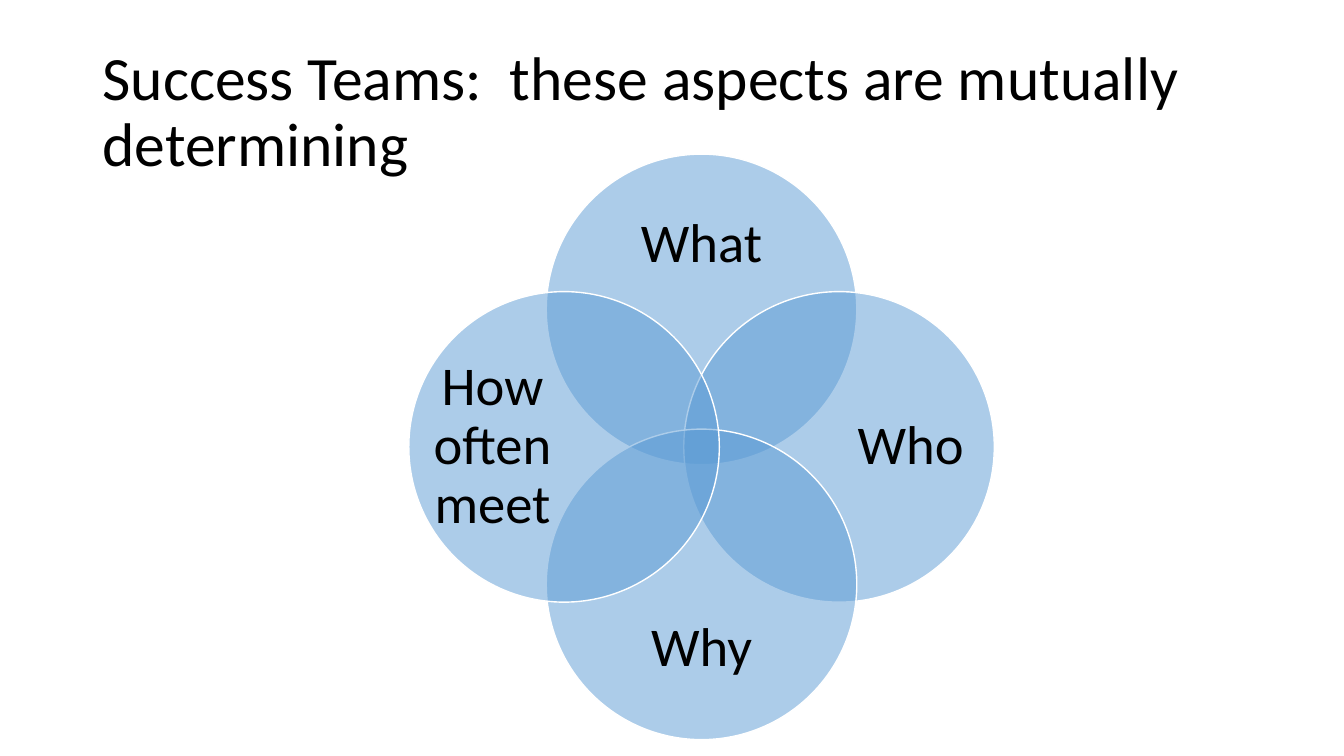
from lxml import etree
from pptx import Presentation
from pptx.dml.color import RGBColor
from pptx.enum import shapes, text
from pptx.oxml.ns import qn
from pptx.util import Pt

TITLE = "Success Teams:  these aspects are mutually determining"
ASPECTS = [
    ("What", 0, -1),
    ("Who", 1, 0),
    ("Why", 0, 1),
    ("How often meet", -1, 0),
]
COLORS = {"circle": "5B9BD5", "line": "FFFFFF", "text": "000000"}
FONT = "Calibri"
CENTER_X, CENTER_Y = 501.1, 319.2
DIAMETER, CIRCLE_STEP = 221.8, 98.2
LABEL_STEP_X, LABEL_STEP_Y = 149.3, 144
LABEL_LONG, LABEL_UPRIGHT_W, LABEL_FLAT_H = 170.6, 85.7, 70.6


def color(name):
    return RGBColor.from_string(COLORS[name])


def box(cx, cy, w, h):
    return Pt(cx - w / 2), Pt(cy - h / 2), Pt(w), Pt(h)


def write(tf, words, size, align):
    tf.text = words
    tf.word_wrap = True
    tf.auto_size = text.MSO_AUTO_SIZE.NONE
    tf.vertical_anchor = text.MSO_ANCHOR.MIDDLE
    p = tf.paragraphs[0]
    p.alignment = align
    p.line_spacing = 0.9
    f = p.runs[0].font
    f.name, f.size = FONT, Pt(size)
    f.color.rgb = color("text")


def add_circle(parent, cx, cy):
    sp = parent.add_shape(shapes.MSO_SHAPE.OVAL, *box(cx, cy, DIAMETER, DIAMETER))
    sp.shadow.inherit = False
    sp.fill.solid()
    sp.fill.fore_color.rgb = color("circle")
    fill = sp._element.spPr.find(qn("a:solidFill"))
    etree.SubElement(fill[0], qn("a:alpha"), val="50000")
    sp.line.color.rgb = color("line")
    sp.line.width = Pt(1)


def add_label(parent, words, cx, cy, w, h):
    tf = parent.add_textbox(*box(cx, cy, w, h)).text_frame
    tf.margin_left = tf.margin_right = tf.margin_top = tf.margin_bottom = 0
    write(tf, words, 39, text.PP_ALIGN.CENTER)


prs = Presentation()
prs.slide_width, prs.slide_height = Pt(960), Pt(540)
s = prs.slides.add_slide(prs.slide_layouts[5])

title = s.shapes.title
title.left, title.top, title.width, title.height = Pt(66), Pt(28.75), Pt(828), Pt(104.4)
write(title.text_frame, TITLE, 44, text.PP_ALIGN.LEFT)

venn = s.shapes.add_group_shape().shapes
for words, dx, dy in ASPECTS:
    add_circle(venn, CENTER_X + dx * CIRCLE_STEP, CENTER_Y + dy * CIRCLE_STEP)
    w, h = (LABEL_UPRIGHT_W, LABEL_LONG) if dx else (LABEL_LONG, LABEL_FLAT_H)
    add_label(venn, words, CENTER_X + dx * LABEL_STEP_X, CENTER_Y + dy * LABEL_STEP_Y, w, h)

prs.save("out.pptx")
